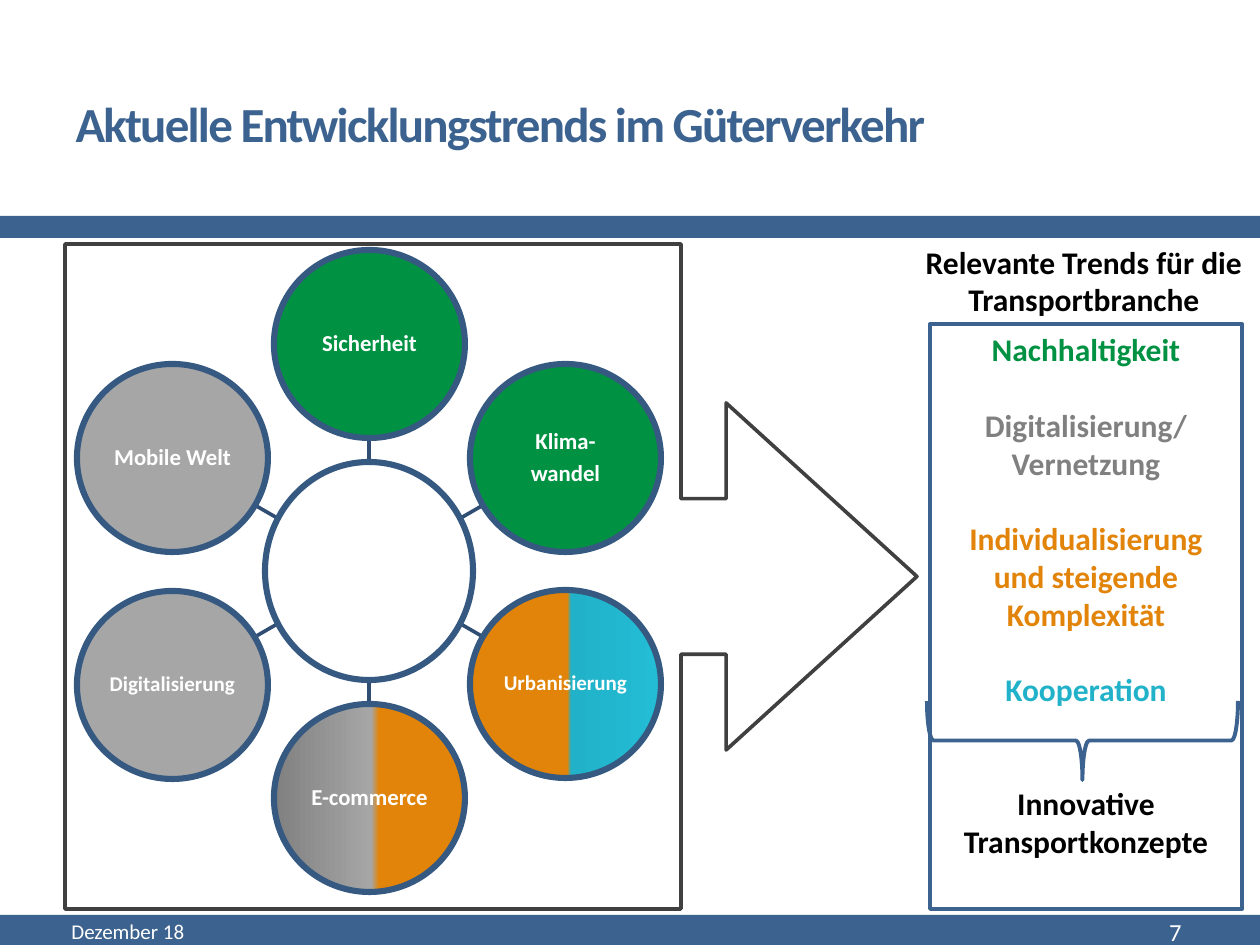
import math
from lxml import etree
from pptx import Presentation
from pptx import util as u
from pptx.dml.color import RGBColor
from pptx.enum import shapes, text
from pptx.oxml import ns

PX = 914400 / 126
COLORS = {
    "blue": "3C628F", "ring": "365982", "spoke": "304E73", "frame": "404040",
    "green": "009242", "grey": "A6A6A6", "dark grey": "808080",
    "orange": "E18409", "cyan": "21B2C9", "light cyan": "23BDD5",
    "white": "FFFFFF", "black": "000000",
}


def add_shape(kind, box, fill=None, line=None, width=0):
    shape = slide.shapes.add_shape(kind, *[round(v * PX) for v in box])
    shape.shadow.inherit = False
    if fill:
        shape.fill.solid()
        shape.fill.fore_color.rgb = RGBColor.from_string(COLORS[fill])
    else:
        shape.fill.background()
    if line:
        shape.line.color.rgb = RGBColor.from_string(COLORS[line])
        shape.line.width = u.Pt(width)
    else:
        shape.line.fill.background()
    return shape


def write(shape, lines, size, color, align, bold=True, anchor=text.MSO_ANCHOR.MIDDLE):
    frame = shape.text_frame
    frame.word_wrap = True
    frame.auto_size = text.MSO_AUTO_SIZE.NONE
    frame.vertical_anchor = anchor
    frame.text = lines
    for paragraph in frame.paragraphs:
        paragraph.alignment = align
        paragraph.font.name = "Calibri"
        paragraph.font.size = u.Pt(size)
        paragraph.font.bold = bold
        paragraph.font.color.rgb = RGBColor.from_string(COLORS[color])
    return frame


presentation = Presentation()
presentation.slide_width = u.Inches(10)
presentation.slide_height = u.Inches(7.5)
slide = presentation.slides.add_slide(presentation.slide_layouts[1])
title, trends = slide.placeholders
auto = shapes.MSO_SHAPE
left, center, right = text.PP_ALIGN.LEFT, text.PP_ALIGN.CENTER, text.PP_ALIGN.RIGHT

# Bands across the slide
add_shape(auto.RECTANGLE, (0, 915, 1260, 30), "blue")
add_shape(auto.RECTANGLE, (0, 216, 1260, 22), "blue")

# Title
title.left, title.top, title.width, title.height = [round(v * PX) for v in (63, 55, 1043, 136)]
frame = write(title, "Aktuelle Entwicklungstrends im Güterverkehr", 28, "blue", left)
frame.paragraphs[0].runs[0].font._element.set("spc", "-100")

# Footer and heading of the trend list
for box, words, size, color, align, bold in [
    ((59, 909, 399, 45), "Dezember 18", 12, "white", left, False),
    ((1047, 909, 147, 45), "7", 14, "white", right, False),
    ((910, 236, 348, 89), "Relevante Trends für die Transportbranche", 18, "black", center, True),
]:
    label = slide.shapes.add_textbox(*[round(v * PX) for v in box])
    write(label, words, size, color, align, bold)

# Frame with arrow
callout = add_shape(auto.RIGHT_ARROW_CALLOUT, (65, 244, 852, 665), None, "frame", 2.08)
for index, value in enumerate((0.234, 0.261, 0.287, 0.723)):
    callout.adjustments[index] = value

# Wheel: circles every 60 degrees, clockwise from the top
HUB_X, HUB_Y, RADIUS = 369, 571, 227
SPOKE_START, SPOKE_END = 106, 133
CIRCLE_W, CIRCLE_H = 191, 188
urban = [(1, "orange"), (51, "orange"), (53, "cyan"), (100, "light cyan")]
commerce = [(0, "dark grey"), (51, "grey"), (55, "orange"), (100, "orange")]
circles = [
    ("Sicherheit", 13, "green"),
    ("Klima-\nwandel", 13, "green"),
    ("Urbanisierung", 12, urban),
    ("E-commerce", 13, commerce),
    ("Digitalisierung", 12, "grey"),
    ("Mobile Welt", 13, "grey"),
]
for index, (words, size, fill) in enumerate(circles):
    angle = math.radians(60 * index)
    dx, dy = math.sin(angle), -math.cos(angle)
    ends = [round((middle + r * d) * PX) for r in (SPOKE_START, SPOKE_END)
            for middle, d in ((HUB_X, dx), (HUB_Y, dy))]
    spoke = slide.shapes.add_connector(shapes.MSO_CONNECTOR.STRAIGHT, *ends)
    spoke.line.color.rgb = RGBColor.from_string(COLORS["spoke"])
    spoke.line.width = u.Pt(2.08)
    etree.SubElement(spoke._element.spPr, ns.qn("a:effectLst"))

    box = (round(HUB_X + RADIUS * dx - CIRCLE_W / 2),
           round(HUB_Y + RADIUS * dy - CIRCLE_H / 2), CIRCLE_W, CIRCLE_H)
    solid = fill if isinstance(fill, str) else None
    circle = add_shape(auto.OVAL, box, solid, "ring", 3.5)
    if not solid:
        circle.fill.gradient()
        circle.fill.gradient_angle = 0
        stops = circle._element.spPr.find(".//" + ns.qn("a:gsLst"))
        for stop in list(stops):
            stops.remove(stop)
        for position, color in fill:
            stop = etree.SubElement(stops, ns.qn("a:gs"), pos=str(position * 1000))
            etree.SubElement(stop, ns.qn("a:srgbClr"), val=COLORS[color])
    frame = write(circle, words, size, "white", center)
    frame.margin_left = frame.margin_right = frame.margin_top = frame.margin_bottom = round(PX)
    for paragraph in frame.paragraphs:
        paragraph.line_spacing = 0.9
        paragraph.space_after = u.Pt(4.5)
add_shape(auto.OVAL, (HUB_X - 104, HUB_Y - 109, 208, 218), "white", "ring", 3.5)

# Trend list: words, colour, blank lines above
items = [
    ("Nachhaltigkeit", "green", 0),
    ("Digitalisierung/", "dark grey", 1),
    ("Vernetzung", "dark grey", 0),
    ("Individualisierung und steigende Komplexität", "orange", 1),
    ("Kooperation", "cyan", 1),
    ("Innovative", "black", 2),
    ("Transportkonzepte", "black", 0),
]
trends.left, trends.top, trends.width, trends.height = [round(v * PX) for v in (930, 324, 312, 585)]
trends.line.color.rgb = RGBColor.from_string(COLORS["blue"])
trends.line.width = u.Pt(2.25)
frame = write(trends, "\n".join(item[0] for item in items), 18, "black", center,
              anchor=text.MSO_ANCHOR.TOP)
for paragraph, (words, color, gap) in zip(frame.paragraphs, items):
    paragraph.font.color.rgb = RGBColor.from_string(COLORS[color])
    paragraph.line_spacing = 1.0
    paragraph.space_before = u.Pt(21.6 * gap)
    properties = paragraph._p.get_or_add_pPr()
    properties.set("marL", "0")
    properties.set("indent", "0")
    bullet = etree.Element(ns.qn("a:buNone"))
    properties.find(ns.qn("a:defRPr")).addprevious(bullet)

# Brace joining the trends to the result
brace = add_shape(auto.LEFT_BRACE, (1043, 585, 79, 311), None, "blue", 2.25)
brace.rotation = 270

presentation.save("out.pptx")
